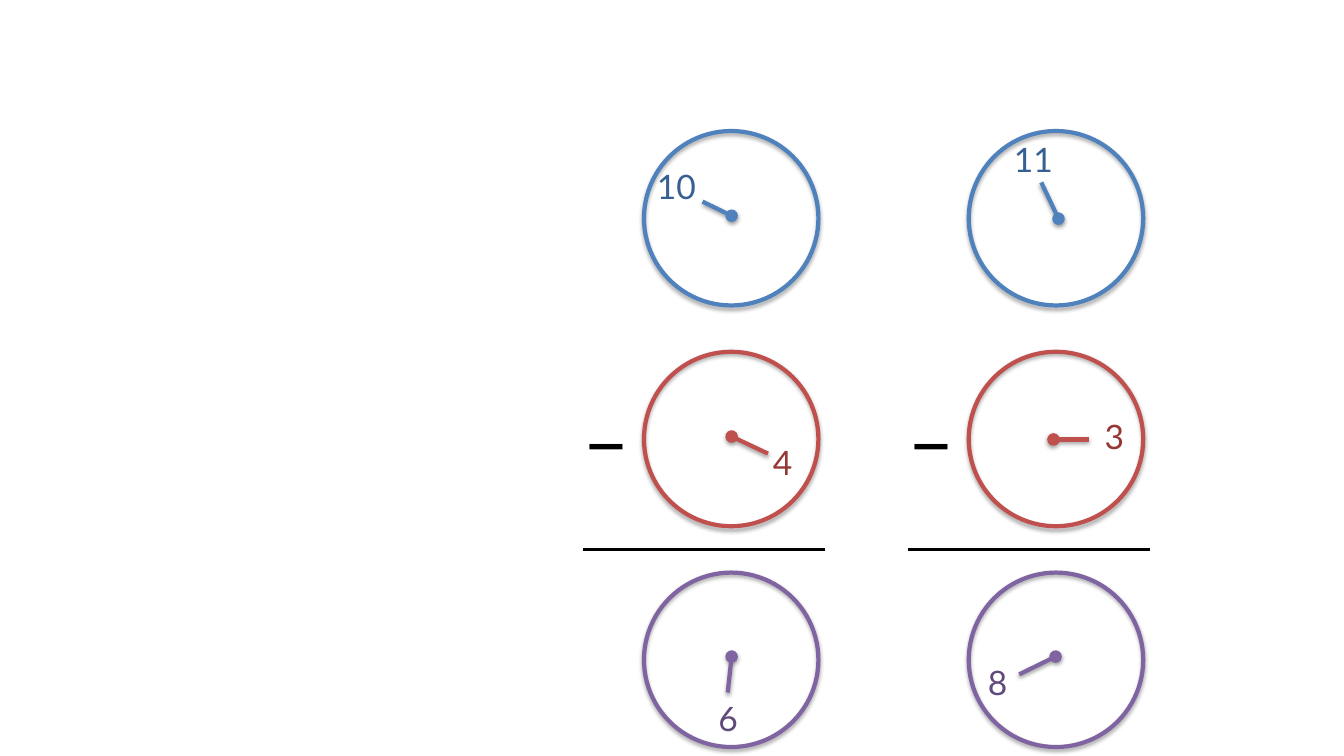
from dataclasses import dataclass

from lxml.etree import SubElement
from pptx import Presentation
from pptx.dml.color import RGBColor
from pptx.enum.shapes import MSO_CONNECTOR, MSO_SHAPE
from pptx.enum.text import MSO_AUTO_SIZE
from pptx.oxml.ns import qn
from pptx.util import Pt


@dataclass(frozen=True)
class Theme:
    font: str = "Lato"
    number_size: float = 24
    minus_size: float = 59
    dial_line: float = 3
    sum_line: float = 2.25
    black: str = "000000"
    blue: str = "4F81BD"
    dark_blue: str = "376092"
    red: str = "C0504D"
    dark_red: str = "953735"
    purple: str = "8064A2"
    dark_purple: str = "604A7B"


THEME = Theme()
DIAMETER = 124.6
COLUMNS = (460, 692)
FIRST_ROW, ROW_PITCH = 93.6, 157.7
MINUS_LEFT, MINUS_TOP = -53, 273
SUM_LEFT, SUM_RIGHT, SUM_TOP = -43.5, 129.3, 392.4

# Line and number colours of each row: minuend, subtrahend, difference
ROW_COLOURS = (
    (THEME.blue, THEME.dark_blue),
    (THEME.red, THEME.dark_red),
    (THEME.purple, THEME.dark_purple),
)
# Number, hand pivot, hand tip and number corner, measured from the dial's corner
PROBLEMS = (
    (
        ("10", (62.6, 60.5), (41.8, 50.4), (2.2, 21.6)),
        ("4", (62.6, 60.5), (88.6, 72.7), (85, 60.5)),
        ("6", (62.6, 60), (59.8, 85.7), (46.1, 85.7)),
    ),
    (
        ("11", (64.1, 62.6), (51.8, 36.7), (25.2, 2.2)),
        ("3", (60.5, 62.6), (85.7, 62.6), (90, 42.5)),
        ("8", (62, 60), (36, 72.7), (6.5, 60)),
    ),
)


def set_effects(drawn, shadow_opacity=None, distance=0):
    """Give a shape a soft shadow below it, or no effect at all."""
    effects = SubElement(drawn._element.spPr, qn("a:effectLst"))
    if shadow_opacity is None:
        return
    shadow = SubElement(
        effects, qn("a:outerShdw"), blurRad=str(Pt(3.1)), dist=str(Pt(distance)),
        dir="5400000", rotWithShape="0",
    )
    black = SubElement(shadow, qn("a:srgbClr"), val=THEME.black)
    SubElement(black, qn("a:alpha"), val=str(shadow_opacity * 1000))


def set_line(drawn, colour, width):
    drawn.line.color.rgb = RGBColor.from_string(colour)
    drawn.line.width = Pt(width)


def add_line(slide, start, end, colour, width):
    line = slide.shapes.add_connector(
        MSO_CONNECTOR.STRAIGHT, *(Pt(value) for value in (*start, *end))
    )
    set_line(line, colour, width)
    return line


def add_text(slide, text, corner, extent, size, colour, insets=(7.2, 3.6)):
    box = slide.shapes.add_textbox(*(Pt(value) for value in (*corner, *extent)))
    frame = box.text_frame
    frame.word_wrap = False
    frame.auto_size = MSO_AUTO_SIZE.SHAPE_TO_FIT_TEXT
    frame.margin_left = frame.margin_right = Pt(insets[0])
    frame.margin_top = frame.margin_bottom = Pt(insets[1])
    frame.text = text
    font = frame.paragraphs[0].runs[0].font
    font.name = THEME.font
    font.size = Pt(size)
    font.color.rgb = RGBColor.from_string(colour)


def add_dial(slide, left, top, clock, colours):
    """Draw a clock face with one hand and the number it points to."""
    number, *offsets = clock
    pivot, tip, corner = ((left + x, top + y) for x, y in offsets)
    line_colour, number_colour = colours

    face = slide.shapes.add_shape(
        MSO_SHAPE.OVAL, Pt(left), Pt(top), Pt(DIAMETER), Pt(DIAMETER)
    )
    face.fill.background()
    set_line(face, line_colour, THEME.dial_line)
    set_effects(face, 35, 1.8)

    hand = add_line(slide, pivot, tip, line_colour, THEME.dial_line)
    SubElement(hand.line._get_or_add_ln(), qn("a:headEnd"), type="oval")
    set_effects(hand, 38, 1.6)

    extent = (14.4 + 14 * len(number), 36)
    add_text(slide, number, corner, extent, THEME.number_size, number_colour)


def add_subtraction(slide, left, clocks):
    """Stack three dials as a written subtraction."""
    for row, (clock, colours) in enumerate(zip(clocks, ROW_COLOURS)):
        add_dial(slide, left, FIRST_ROW + row * ROW_PITCH, clock, colours)
    add_text(slide, "–", (left + MINUS_LEFT, MINUS_TOP), (54, 80.6),
             THEME.minus_size, THEME.black, insets=(9.4, 5))
    sum_rule = add_line(slide, (left + SUM_LEFT, SUM_TOP), (left + SUM_RIGHT, SUM_TOP),
                        THEME.black, THEME.sum_line)
    set_effects(sum_rule)


def main():
    presentation = Presentation()
    presentation.slide_width, presentation.slide_height = Pt(960), Pt(540)
    slide = presentation.slides.add_slide(presentation.slide_layouts[6])
    for left, clocks in zip(COLUMNS, PROBLEMS):
        add_subtraction(slide, left, clocks)
    presentation.save("out.pptx")


if __name__ == "__main__":
    main()
